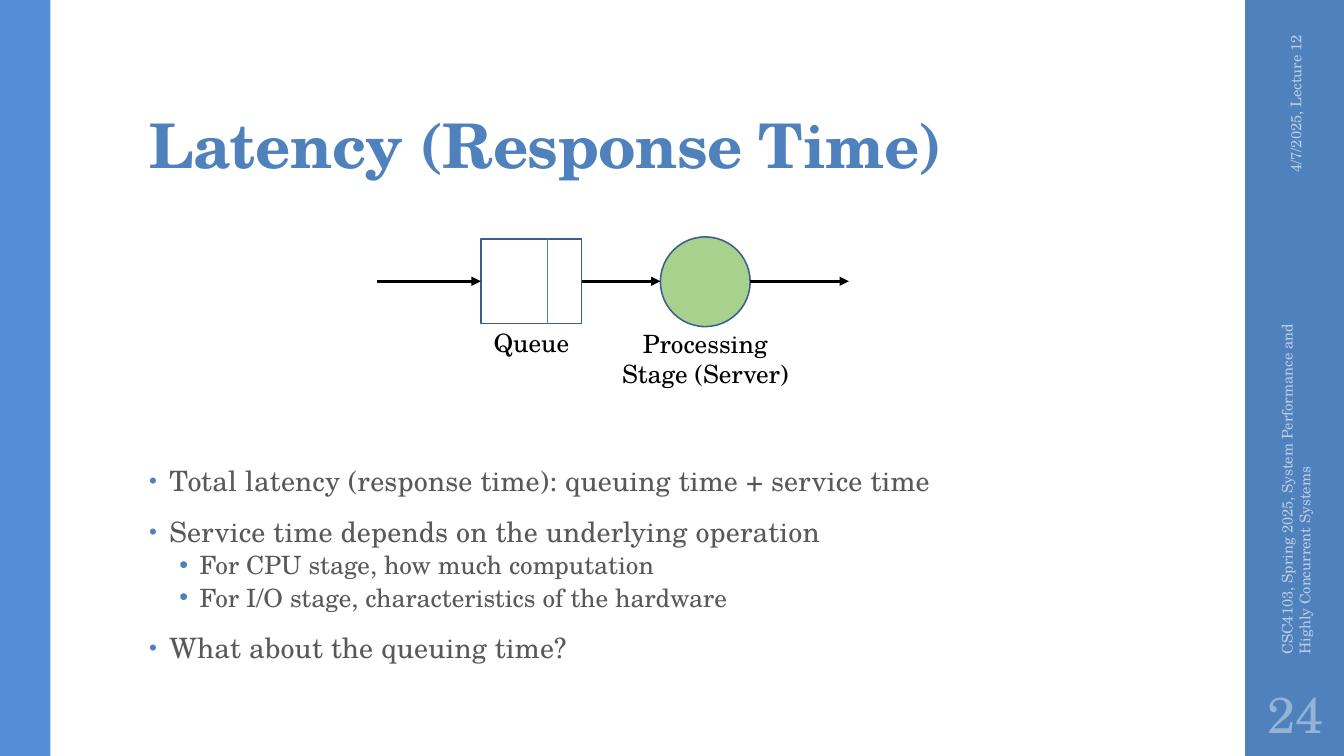
from dataclasses import dataclass

from lxml import etree
from pptx import Presentation
from pptx.dml.color import RGBColor
from pptx.enum import shapes, text
from pptx.oxml import ns
from pptx.util import Inches, Pt

TITLE = "Latency (Response Time)"
BULLETS = [
    (0, "Total latency (response time): queuing time + service time"),
    (0, "Service time depends on the underlying operation"),
    (1, "For CPU stage, how much computation"),
    (1, "For I/O stage, characteristics of the hardware"),
    (0, "What about the queuing time?"),
]
DATE = "4/7/2025, Lecture 12"
FOOTER = "CSC4103, Spring 2025, System Performance and Highly Concurrent Systems"
PAGE = "24"
QUEUE_LABEL = "Queue"
SERVER_LABEL = "Processing Stage (Server)"


@dataclass(frozen=True)
class Theme:
    font: str = "TeX Gyre Schola"
    accent: str = "4F81BD"
    left_bar: str = "558ED5"
    body: str = "595959"
    margin: str = "B9CDE5"
    page: str = "95B3D7"
    outline: str = "3A5F8C"
    server: str = "A9D18E"
    white: str = "FFFFFF"
    black: str = "000000"
    title_size: float = 44
    page_size: float = 36
    label_size: float = 18
    margin_size: float = 10.5


@dataclass(frozen=True)
class Level:
    size: float
    left: float
    line: float
    before: float
    after: float
    bullet_pct: int
    tracking: int


THEME = Theme()
LEVELS = [Level(20, 0.2, 0.85, 14, 2, 80, 10), Level(18, 0.5, 0.8, 3, 3, 100, 0)]
HANG = 0.2
SLIDE_W, SLIDE_H = 13.33, 7.5
SIDE_W = 1
SIDE_X = SLIDE_W - SIDE_W + 0.02
QUEUE_X, QUEUE_Y, QUEUE_W, QUEUE_H = 4.77, 2.37, 1, 0.84
SERVER_X, SERVER_D = 6.55, 0.89
FLOW_Y = QUEUE_Y + QUEUE_H / 2
SLOT_X = 5.43
ARROW_START, ARROW_END = 3.74, 8.42


def rgb(value):
    return RGBColor.from_string(value)


def place(sp, x, y, w, h):
    sp.left, sp.top, sp.width, sp.height = map(Inches, (x, y, w, h))


def add_run(p, words, size, color, bold=False, tracking=0):
    r = p.add_run()
    r.text = words
    r.font.name = THEME.font
    r.font.size = Pt(size)
    r.font.bold = bold
    r.font.color.rgb = rgb(color)
    if tracking:
        r._r.get_or_add_rPr().set("spc", str(tracking))


def set_frame(tf, anchor, insets=(0.1, 0.05, 0.1, 0.05)):
    tf.word_wrap = True
    tf.auto_size = text.MSO_AUTO_SIZE.NONE
    tf.vertical_anchor = anchor
    tf.margin_left, tf.margin_top, tf.margin_right, tf.margin_bottom = map(Inches, insets)


def add_label(s, words, box, size, color, align=text.PP_ALIGN.CENTER,
              anchor=text.MSO_ANCHOR.TOP, rotation=0, inset=0.1):
    sp = s.shapes.add_textbox(*map(Inches, box))
    sp.rotation = rotation
    set_frame(sp.text_frame, anchor, (inset, 0.05, inset, 0.05))
    p = sp.text_frame.paragraphs[0]
    p.alignment = align
    add_run(p, words, size, color)


def add_block(s, kind, box, fill, line=None):
    sp = s.shapes.add_shape(kind, *map(Inches, box))
    sp.shadow.inherit = False
    sp.fill.solid()
    sp.fill.fore_color.rgb = rgb(fill)
    if line:
        sp.line.color.rgb = rgb(line)
        sp.line.width = Pt(1.1)
    else:
        sp.line.fill.background()
    return sp


def add_line(s, x1, y1, x2, y2, color, width, arrow=False):
    cx = s.shapes.add_connector(shapes.MSO_CONNECTOR.STRAIGHT,
                                *map(Inches, (x1, y1, x2, y2)))
    cx.line.color.rgb = rgb(color)
    cx.line.width = Pt(width)
    if arrow:
        etree.SubElement(cx.line._get_or_add_ln(), ns.qn("a:tailEnd"), type="triangle")
    etree.SubElement(cx._element.spPr, ns.qn("a:effectLst"))
    return cx


def add_bullet(p, level):
    pPr = p._p.get_or_add_pPr()
    pPr.set("marL", str(Inches(level.left)))
    pPr.set("indent", str(-Inches(HANG)))
    color = etree.SubElement(pPr, ns.qn("a:buClr"))
    etree.SubElement(color, ns.qn("a:srgbClr"), val=THEME.accent)
    etree.SubElement(pPr, ns.qn("a:buSzPct"), val=str(level.bullet_pct * 1000))
    etree.SubElement(pPr, ns.qn("a:buFont"), typeface="Arial")
    etree.SubElement(pPr, ns.qn("a:buChar"), char="•")


def add_title(s):
    sp = s.shapes.title
    place(sp, 1.38, 0.32, 10.6, 1.53)
    set_frame(sp.text_frame, text.MSO_ANCHOR.BOTTOM, (0.1, 0.03, 0.1, 0.05))
    p = sp.text_frame.paragraphs[0]
    p.alignment = text.PP_ALIGN.LEFT
    p.line_spacing = 0.9
    add_run(p, TITLE, THEME.title_size, THEME.accent, True, -50)


def add_body(s):
    sp = s.placeholders[1]
    place(sp, 1.38, 4.6, 9.4, 2.16)
    tf = sp.text_frame
    set_frame(tf, text.MSO_ANCHOR.TOP)
    for i, (depth, words) in enumerate(BULLETS):
        level = LEVELS[depth]
        p = tf.add_paragraph() if i else tf.paragraphs[0]
        p.level = depth
        add_bullet(p, level)
        p.line_spacing = level.line
        p.space_before = Pt(level.before if i else 0)
        p.space_after = Pt(level.after)
        add_run(p, words, level.size, THEME.body, tracking=level.tracking)


def add_margins(s):
    rect = shapes.MSO_SHAPE.RECTANGLE
    add_block(s, rect, (SIDE_X, 0, SLIDE_W - SIDE_X, SLIDE_H), THEME.accent)
    add_block(s, rect, (0, 0, 0.5, SLIDE_H), THEME.left_bar)
    middle = text.MSO_ANCHOR.MIDDLE
    add_label(s, DATE, (11.81, 1.09, 2.08, 0.4), THEME.margin_size, THEME.margin,
              text.PP_ALIGN.RIGHT, middle, 270)
    add_label(s, FOOTER, (10.89, 4.43, 3.92, 0.4), THEME.margin_size, THEME.margin,
              text.PP_ALIGN.LEFT, middle, 270)
    add_label(s, PAGE, (SIDE_X, 6.75, SIDE_W, 0.65), THEME.page_size, THEME.page,
              anchor=middle, inset=0.05)


def add_diagram(s):
    add_block(s, shapes.MSO_SHAPE.OVAL, (SERVER_X, 2.35, SERVER_D, SERVER_D),
              THEME.server, THEME.outline)
    queue = add_block(s, shapes.MSO_SHAPE.RECTANGLE, (QUEUE_X, QUEUE_Y, QUEUE_W, QUEUE_H),
                      THEME.white, THEME.outline)
    add_line(s, SLOT_X, QUEUE_Y, SLOT_X, QUEUE_Y + QUEUE_H, THEME.accent, 0.75)
    spans = [(ARROW_START, QUEUE_X), (QUEUE_X + QUEUE_W, SERVER_X),
             (SERVER_X + SERVER_D, ARROW_END)]
    arrive, serve, leave = [
        add_line(s, x1, FLOW_Y, x2, FLOW_Y, THEME.black, 2.25, True) for x1, x2 in spans]
    arrive.end_connect(queue, 1)
    serve.begin_connect(queue, 3)
    add_label(s, SERVER_LABEL, (6.05, 3.21, 1.89, 0.71), THEME.label_size, THEME.black)
    add_label(s, QUEUE_LABEL, (4.4, 3.2, 1.74, 0.4), THEME.label_size, THEME.black)


def main():
    prs = Presentation()
    prs.slide_width, prs.slide_height = Inches(SLIDE_W), Inches(SLIDE_H)
    s = prs.slides.add_slide(prs.slide_layouts[1])
    add_margins(s)
    add_title(s)
    add_body(s)
    add_diagram(s)
    prs.save("out.pptx")


if __name__ == "__main__":
    main()
